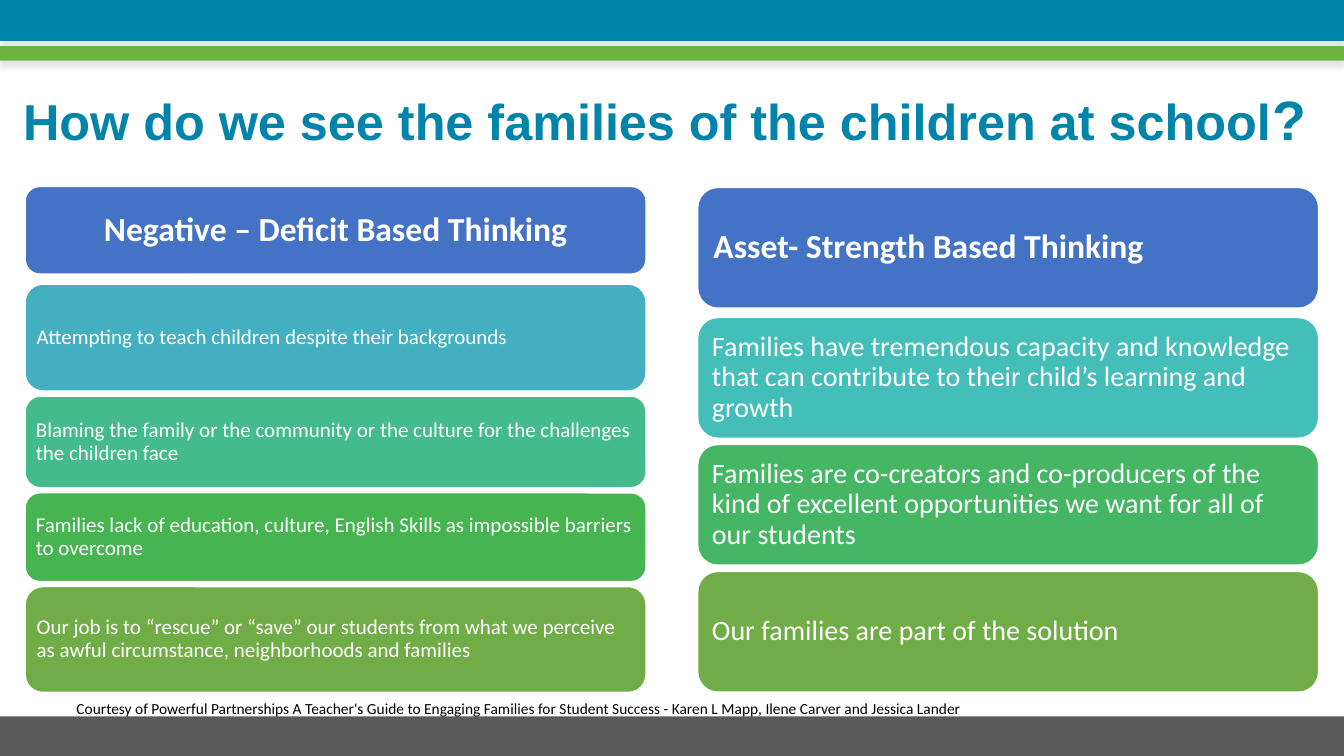
from lxml import etree
from pptx import Presentation
from pptx import util as u
from pptx.dml.color import RGBColor
from pptx.enum import shapes, text
from pptx.oxml import ns

TEAL = RGBColor(0x00, 0x84, 0xA9)
BAND_GREEN = RGBColor(0x6C, 0xB3, 0x3F)
GRAY = RGBColor(0x5A, 0x5A, 0x5A)
WHITE = RGBColor(0xFF, 0xFF, 0xFF)
BLACK = RGBColor(0x00, 0x00, 0x00)
BLUE = RGBColor(0x44, 0x72, 0xC4)
AQUA = RGBColor(0x43, 0xAF, 0xC0)
SEA_GREEN = RGBColor(0x43, 0xBB, 0x8D)
GREEN = RGBColor(0x45, 0xB4, 0x51)
TURQUOISE = RGBColor(0x43, 0xBE, 0xB9)
EMERALD = RGBColor(0x45, 0xB6, 0x64)
OLIVE = RGBColor(0x70, 0xAD, 0x47)

SLIDE_WIDTH, SLIDE_HEIGHT = 960, 540
CARD_WIDTH = 443.5

# Each card: height, fill, wording; the first card is the heading
DEFICIT_CARDS = [
    (62.6, BLUE, "Negative – Deficit Based Thinking"),
    (76.3, AQUA, "Attempting to teach children despite their backgrounds"),
    (65.5, SEA_GREEN, "Blaming the family or the community or the culture "
                      "for the challenges the children face"),
    (63.4, GREEN, "Families lack of education, culture, English Skills "
                  "as impossible barriers to overcome"),
    (75.6, OLIVE, "Our job is to “rescue” or “save” our students from what we "
                  "perceive as awful circumstance, neighborhoods and families"),
]
ASSET_CARDS = [
    (86.2, BLUE, "Asset- Strength Based Thinking"),
    (86.2, TURQUOISE, "Families have tremendous capacity and knowledge that "
                      "can contribute to their child’s learning and growth"),
    (86.2, EMERALD, "Families are co-creators and co-producers of the kind of "
                    "excellent opportunities we want for all of our students"),
    (86.2, OLIVE, "Our families are part of the solution"),
]


def add_run(paragraph, wording, font, size, color, bold=False):
    run = paragraph.add_run()
    run.text = wording
    run.font.name = font
    run.font.size = u.Pt(size)
    run.font.color.rgb = color
    run.font.bold = bold


def add_block(slide, kind, left, top, width, height, fill, line=None):
    shape = slide.shapes.add_shape(
        kind, u.Pt(left), u.Pt(top), u.Pt(width), u.Pt(height))
    shape.fill.solid()
    shape.fill.fore_color.rgb = fill
    if line is None:
        shape.line.fill.background()
    else:
        shape.line.color.rgb = line
        shape.line.width = u.Pt(1)
    shape.shadow.inherit = False
    return shape


def add_band(slide, top, height, fill, line=None):
    return add_block(slide, shapes.MSO_SHAPE.RECTANGLE,
                     0, top, SLIDE_WIDTH, height, fill, line)


def add_shadow(shape):
    effects = shape.element.spPr.find(ns.qn("a:effectLst"))
    shadow = etree.SubElement(
        effects, ns.qn("a:outerShdw"), blurRad=str(u.Pt(4)),
        dist=str(u.Pt(4)), dir="5400000", rotWithShape="0")
    color = etree.SubElement(shadow, ns.qn("a:srgbClr"), val="000000")
    etree.SubElement(color, ns.qn("a:alpha"), val="9000")


def add_text_box(slide, left, top, width, height, anchor):
    box = slide.shapes.add_textbox(
        u.Pt(left), u.Pt(top), u.Pt(width), u.Pt(height))
    box.text_frame.word_wrap = True
    box.text_frame.vertical_anchor = anchor
    return box.text_frame.paragraphs[0]


def add_card(slide, left, top, height, fill, wording, size, inset, align, bold):
    card = add_block(slide, shapes.MSO_SHAPE.ROUNDED_RECTANGLE,
                     left, top, CARD_WIDTH, height, fill, WHITE)
    frame = card.text_frame
    frame.word_wrap = True
    frame.vertical_anchor = text.MSO_ANCHOR.MIDDLE
    frame.margin_left = frame.margin_right = u.Pt(inset)
    frame.margin_top = frame.margin_bottom = u.Pt(inset)
    paragraph = frame.paragraphs[0]
    paragraph.alignment = align
    paragraph.line_spacing = 0.9
    add_run(paragraph, wording, "Calibri", size, WHITE, bold)


def add_card_column(slide, left, top, cards, heading_gap, gap,
                    size, inset, heading_align):
    for index, (height, fill, wording) in enumerate(cards):
        if index == 0:
            add_card(slide, left, top, height, fill, wording,
                     24, 7.2, heading_align, True)
            top += height + heading_gap
        else:
            add_card(slide, left, top, height, fill, wording,
                     size, inset, text.PP_ALIGN.LEFT, False)
            top += height + gap


def main():
    presentation = Presentation()
    presentation.slide_width = u.Pt(SLIDE_WIDTH)
    presentation.slide_height = u.Pt(SLIDE_HEIGHT)
    slide = presentation.slides.add_slide(presentation.slide_layouts[6])

    # Bands at the top and bottom
    add_shadow(add_band(slide, 0, 29, TEAL, TEAL))
    add_shadow(add_band(slide, 33, 10.3, BAND_GREEN))
    add_band(slide, 511.7, 28.3, GRAY)

    # Title
    title = add_text_box(slide, 9.4, 42, 934, 91.4, text.MSO_ANCHOR.MIDDLE)
    title.line_spacing = 0.9
    add_run(title, "How do we see the families of the children at school",
            "Arial", 36, TEAL, True)
    add_run(title, "?", "Arial", 39.6, TEAL, True)

    # Two columns of cards
    add_card_column(slide, 18, 133.2, DEFICIT_CARDS, 7.2, 3.6,
                    15, 4.5, text.PP_ALIGN.CENTER)
    add_card_column(slide, 498.4, 133.9, ASSET_CARDS, 6.7, 4.5,
                    20, 6, text.PP_ALIGN.LEFT)

    # Credit line
    credit = add_text_box(slide, 47.5, 495.5, 826.5, 27, text.MSO_ANCHOR.TOP)
    add_run(credit, "Courtesy of Powerful Partnerships A Teacher's Guide to "
            "Engaging Families for Student Success - Karen L Mapp, "
            "Ilene Carver and Jessica Lander", "Calibri", 11, BLACK)

    presentation.save("out.pptx")


if __name__ == "__main__":
    main()
